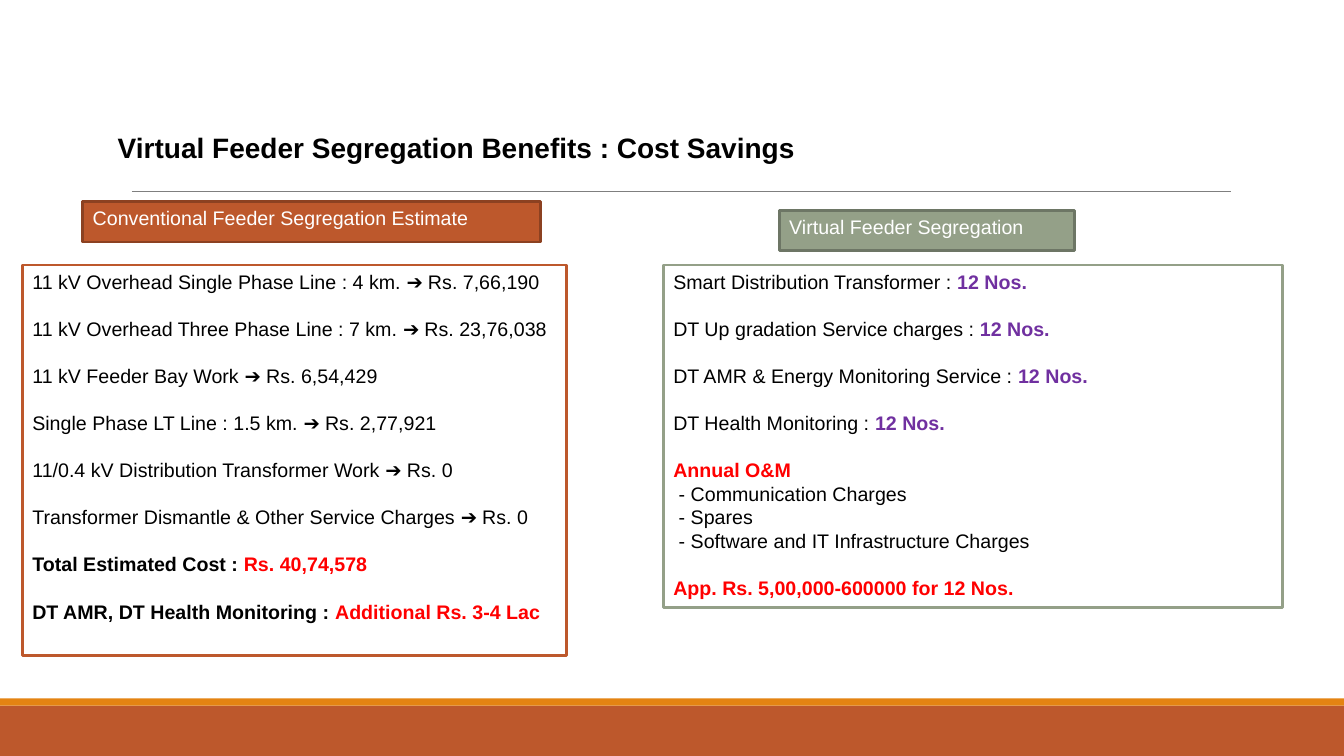
from dataclasses import dataclass

from lxml.etree import SubElement
from pptx import Presentation
from pptx.dml.color import RGBColor
from pptx.enum.shapes import MSO_CONNECTOR, MSO_SHAPE
from pptx.enum.text import MSO_ANCHOR, PP_ALIGN
from pptx.oxml.ns import qn
from pptx.util import Pt


@dataclass(frozen=True)
class Theme:
    font: str = "Arial"
    title_size: float = 20
    body_size: float = 14
    line_pitch: float = 16.8
    black: str = "000000"
    white: str = "FFFFFF"
    red: str = "FF0000"
    purple: str = "7030A0"
    rust: str = "BD582C"
    dark_rust: str = "8C4121"
    orange: str = "E48312"
    sage: str = "94A088"
    dark_sage: str = "6D7665"
    rule: str = "7F7F7F"


theme = Theme()


def add_box(left, top, width, height, fill, outline=None):
    shape = slide.shapes.add_shape(
        MSO_SHAPE.RECTANGLE, Pt(left), Pt(top), Pt(width), Pt(height))
    shape.shadow.inherit = False
    shape.fill.solid()
    shape.fill.fore_color.rgb = RGBColor.from_string(fill)
    if outline:
        shape.line.color.rgb = RGBColor.from_string(outline)
        shape.line.width = Pt(2)
    else:
        shape.line.fill.background()
    shape.text_frame.word_wrap = True
    shape.text_frame.vertical_anchor = MSO_ANCHOR.TOP
    return shape


def add_run(paragraph, text, color, bold=False, size=theme.body_size):
    paragraph.alignment = PP_ALIGN.LEFT
    run = paragraph.add_run()
    run.text = text
    run.font.name = theme.font
    run.font.size = Pt(size)
    run.font.bold = bold
    run.font.color.rgb = RGBColor.from_string(color)


presentation = Presentation()
presentation.slide_width = Pt(960)
presentation.slide_height = Pt(540)
slide = presentation.slides.add_slide(presentation.slide_layouts[6])

# Footer bands
add_box(0, 504, 960, 36, theme.rust)
add_box(0, 498.8, 960, 5.2, theme.orange)

# Title and rule
title = slide.shapes.add_textbox(Pt(77), Pt(89.3), Pt(807), Pt(31.7))
title.text_frame.word_wrap = True
title.text_frame.vertical_anchor = MSO_ANCHOR.MIDDLE
add_run(title.text_frame.paragraphs[0],
        "Virtual Feeder Segregation Benefits : Cost Savings",
        theme.black, True, theme.title_size)

rule = slide.shapes.add_connector(
    MSO_CONNECTOR.STRAIGHT, Pt(94.3), Pt(136.6), Pt(879), Pt(136.6))
rule.line.color.rgb = RGBColor.from_string(theme.rule)
rule.line.width = Pt(0.75)
SubElement(rule._element.spPr, qn("a:effectLst"))

# Column content: each line is a list of (text, color, bold) runs
conventional_lines = [[(text, theme.black, False)] for text in (
    "11 kV Overhead Single Phase Line : 4 km. ➔ Rs. 7,66,190",
    "11 kV Overhead Three Phase Line : 7 km. ➔ Rs. 23,76,038",
    "11 kV Feeder Bay Work ➔ Rs. 6,54,429",
    "Single Phase LT Line : 1.5 km. ➔ Rs. 2,77,921",
    "11/0.4 kV Distribution Transformer Work ➔ Rs. 0",
    "Transformer Dismantle & Other Service Charges ➔ Rs. 0",
)] + [[(label, theme.black, True), (cost, theme.red, True)] for label, cost in (
    ("Total Estimated Cost : ", "Rs. 40,74,578"),
    ("DT AMR, DT Health Monitoring : ", "Additional Rs. 3-4 Lac"),
)]

virtual_lines = [
    [(label + " : ", theme.black, False), ("12 Nos.", theme.purple, True)]
    for label in ("Smart Distribution Transformer", "DT Up gradation Service charges",
                  "DT AMR & Energy Monitoring Service", "DT Health Monitoring")
] + [[("Annual O&M", theme.red, True)]] + [
    [("- " + charge, theme.black, False)]
    for charge in ("Communication Charges", "Spares",
                   "Software and IT Infrastructure Charges")
] + [[("App. Rs. 5,00,000-600000 for 12 Nos.", theme.red, True)]]

# (heading, heading box, heading outline, column color, body box, lines)
columns = [
    ("Conventional Feeder Segregation Estimate", (59.2, 143.8, 327, 29.1),
     theme.dark_rust, theme.rust, (16, 189.3, 388.5, 278.8), conventional_lines),
    ("Virtual Feeder Segregation", (556.7, 150.2, 211, 28.8),
     theme.dark_sage, theme.sage, (473.8, 189.3, 442.4, 244.8), virtual_lines),
]

# Columns
for heading, heading_box, heading_outline, color, body_box, lines in columns:
    body = add_box(*body_box, theme.white, color)
    for index, runs in enumerate(lines):
        frame = body.text_frame
        paragraph = frame.add_paragraph() if index else frame.paragraphs[0]
        paragraph.line_spacing = Pt(theme.line_pitch)
        if runs[0][0].startswith("- "):
            paragraph._p.get_or_add_pPr().set("marL", str(Pt(3.9)))
        elif index:
            paragraph.space_before = Pt(theme.line_pitch)
        for text, run_color, bold in runs:
            add_run(paragraph, text, run_color, bold)

    header = add_box(*heading_box, color, heading_outline)
    header_paragraph = header.text_frame.paragraphs[0]
    header_paragraph.line_spacing = Pt(theme.line_pitch)
    add_run(header_paragraph, heading, theme.white)

presentation.save("out.pptx")
